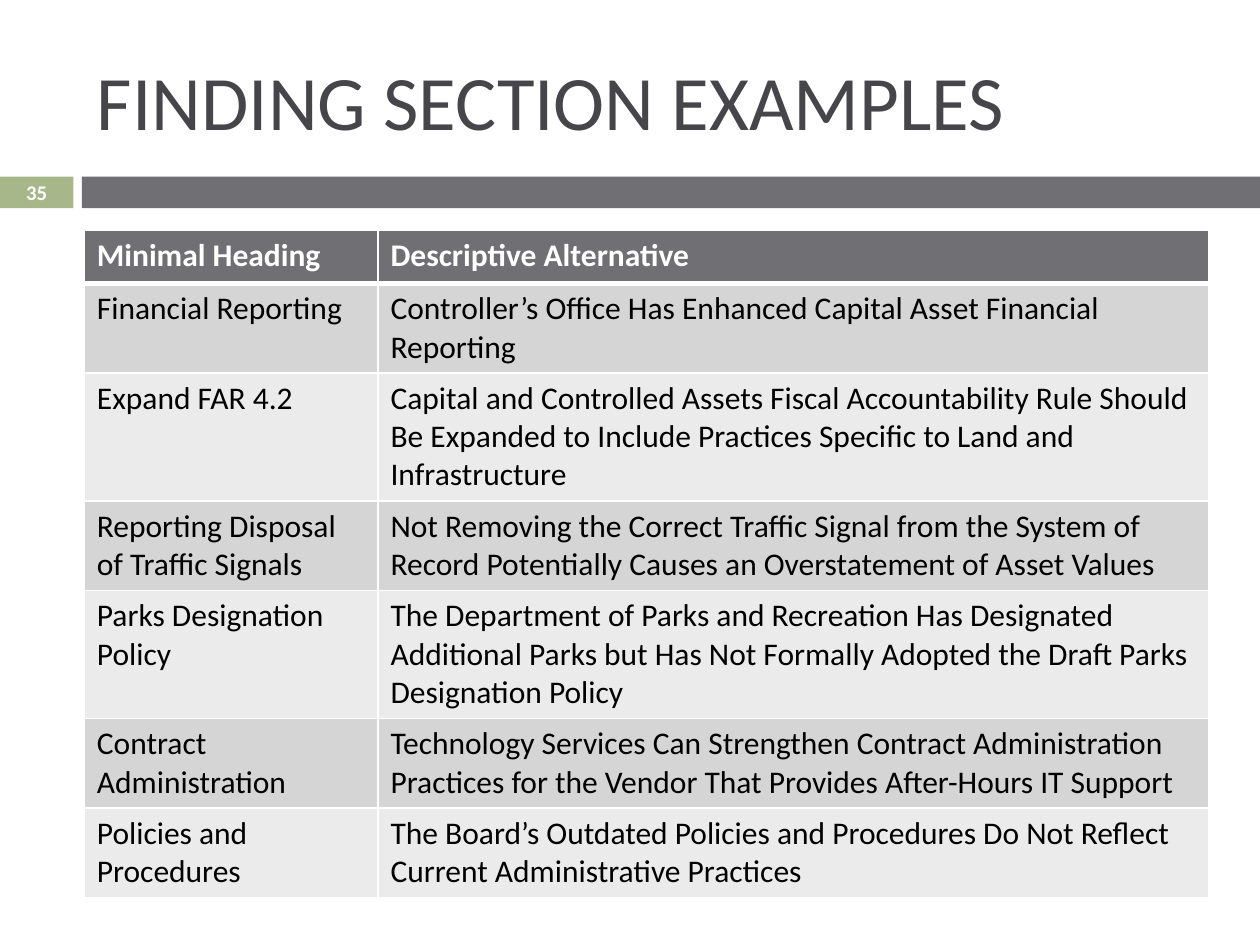
from lxml.etree import SubElement
from pptx import Presentation
from pptx.dml.color import RGBColor
from pptx.enum.shapes import MSO_SHAPE
from pptx.enum.text import MSO_ANCHOR, MSO_AUTO_SIZE, PP_ALIGN
from pptx.oxml.ns import qn
from pptx.util import Cm, Pt

COLORS = {
    "title": "46464A",
    "bar": "6F6F74",
    "accent": "A7B789",
    "white": "FFFFFF",
    "black": "000000",
    "odd_row": "D5D5D6",
    "even_row": "EBEBEB",
}
HEADINGS = [
    ("Minimal Heading", "Descriptive Alternative"),
    ("Financial Reporting",
     "Controller’s Office Has Enhanced Capital Asset Financial Reporting"),
    ("Expand FAR 4.2",
     "Capital and Controlled Assets Fiscal Accountability Rule Should Be Expanded "
     "to Include Practices Specific to Land and Infrastructure"),
    ("Reporting Disposal of Traffic Signals",
     "Not Removing the Correct Traffic Signal from the System of Record "
     "Potentially Causes an Overstatement of Asset Values"),
    ("Parks Designation Policy",
     "The Department of Parks and Recreation Has Designated Additional Parks "
     "but Has Not Formally Adopted the Draft Parks Designation Policy"),
    ("Contract Administration",
     "Technology Services Can Strengthen Contract Administration Practices "
     "for the Vendor That Provides After-Hours IT Support"),
    ("Policies and Procedures",
     "The Board’s Outdated Policies and Procedures Do Not Reflect "
     "Current Administrative Practices"),
]
LEFT, CONTENT_WIDTH = Cm(1.7), Cm(22.66)
BAR_TOP, BAR_HEIGHT, PAGE_WIDTH = Cm(3.56), Cm(0.64), Cm(1.48)


def rgb(name):
    """Return the named colour."""
    return RGBColor.from_string(COLORS[name])


def apply(target, values):
    """Set every attribute in values on target."""
    for attribute, value in values.items():
        setattr(target, attribute, value)


def write(frame, text, size, color, bold=False, align=PP_ALIGN.LEFT):
    """Fill a text frame with one formatted paragraph."""
    frame.text = text
    paragraph = frame.paragraphs[0]
    paragraph.alignment = align
    apply(paragraph.font, {"name": "Calibri", "size": Pt(size), "bold": bold})
    paragraph.font.color.rgb = rgb(color)


def add_title(slide, text):
    """Place and format the title placeholder."""
    title = slide.shapes.title
    apply(title, {"left": LEFT, "top": Cm(0.64), "width": CONTENT_WIDTH, "height": Cm(2.74)})
    apply(title.text_frame, {"auto_size": MSO_AUTO_SIZE.NONE, "word_wrap": True,
                             "vertical_anchor": MSO_ANCHOR.MIDDLE})
    write(title.text_frame, text, 44, "title")


def add_bar(slide, left, width, color):
    """Add one block of the band under the title."""
    bar = slide.shapes.add_shape(MSO_SHAPE.RECTANGLE, left, BAR_TOP, width, BAR_HEIGHT)
    bar.shadow.inherit = False
    bar.fill.solid()
    bar.fill.fore_color.rgb = rgb(color)
    bar.line.fill.background()


def add_page_number(slide, number):
    """Add the page number over the accent block."""
    box = slide.shapes.add_textbox(0, Cm(3.53), PAGE_WIDTH, Cm(0.69))
    apply(box.text_frame, {"word_wrap": True, "vertical_anchor": MSO_ANCHOR.MIDDLE,
                           "margin_top": 0, "margin_bottom": 0})
    write(box.text_frame, number, 11.9, "white", True, PP_ALIGN.CENTER)


def add_borders(cell, widths):
    """Draw white cell borders of the given widths in points."""
    properties = cell._tc.get_or_add_tcPr()
    for side, width in widths.items():
        line = SubElement(properties, qn(f"a:ln{side}"), w=str(Pt(width)))
        fill = SubElement(line, qn("a:solidFill"))
        SubElement(fill, qn("a:srgbClr"), val=COLORS["white"])


def add_heading_table(slide, rows):
    """Add the table that pairs minimal and descriptive headings."""
    frame = slide.shapes.add_table(len(rows), 2, LEFT, Cm(4.65), CONTENT_WIDTH, Cm(13.26))
    table = frame.table
    for column, width in zip(table.columns, (Cm(5.92), Cm(16.74))):
        column.width = width
    for row_index, texts in enumerate(rows):
        is_header = row_index == 0
        table.rows[row_index].height = Cm(1.06 if is_header else 1.03)
        fill = "bar" if is_header else ("even_row", "odd_row")[row_index % 2]
        borders = {"L": 1, "R": 1, "T": 3 if row_index == 1 else 1, "B": 3 if is_header else 1}
        for column_index, text in enumerate(texts):
            cell = table.cell(row_index, column_index)
            write(cell.text_frame, text, 18, "white" if is_header else "black", is_header)
            add_borders(cell, borders)
            cell.fill.solid()
            cell.fill.fore_color.rgb = rgb(fill)
    frame.height = Cm(13.26)


def main():
    """Build and save the slide."""
    deck = Presentation()
    apply(deck, {"slide_width": Cm(25.4), "slide_height": Cm(19.05)})
    slide = deck.slides.add_slide(deck.slide_layouts[5])
    band_left = Cm(1.65)
    add_bar(slide, 0, PAGE_WIDTH, "accent")
    add_bar(slide, band_left, deck.slide_width - band_left, "bar")
    add_title(slide, "FINDING SECTION EXAMPLES")
    add_heading_table(slide, HEADINGS)
    add_page_number(slide, "35")
    deck.save("out.pptx")


if __name__ == "__main__":
    main()
